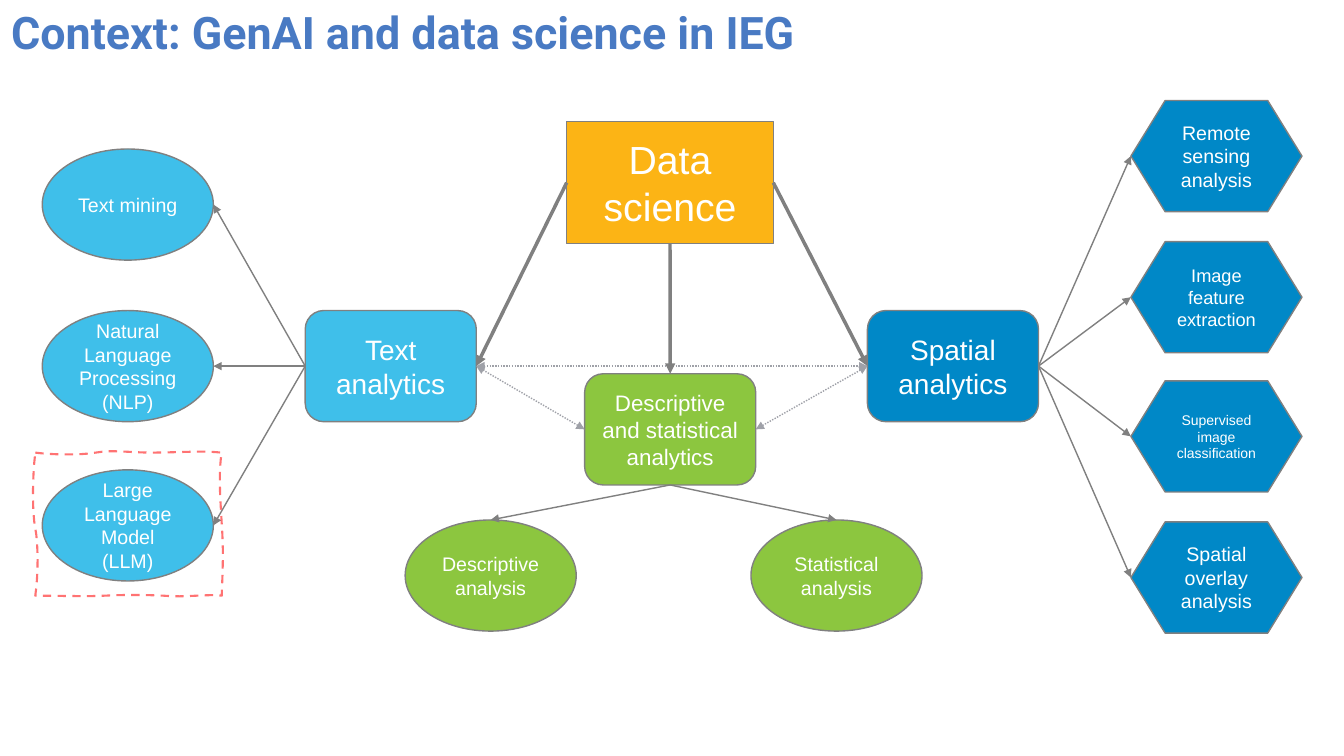
import pptx
import pptx.util
import pptx.dml.color
import pptx.enum.dml
import pptx.enum.shapes
import pptx.enum.text
import pptx.oxml
import pptx.oxml.ns
import lxml.etree

Pt = pptx.util.Pt
MSO_SHAPE = pptx.enum.shapes.MSO_SHAPE
MSO_LINE = pptx.enum.dml.MSO_LINE
MSO_ANCHOR = pptx.enum.text.MSO_ANCHOR
PP_ALIGN = pptx.enum.text.PP_ALIGN
TOP, LEFT, BOTTOM, RIGHT = range(4)

COLORS = {
    "title": "497AC3",
    "white": "FFFFFF",
    "amber": "FCB415",
    "sky": "3FBFEA",
    "blue": "0088C7",
    "green": "8CC63F",
    "gray": "808080",
    "silver": "9FA1A8",
    "red": "FF0000",
}
NODE_W, NODE_H = 122.2, 79.4
TEXT_X, SPATIAL_X = 30.2, 807.8
TEXT_TOPICS = [
    ("Text mining", 106.4),
    ("Natural Language Processing (NLP)", 221.8),
    ("Large Language Model (LLM)", 335.6),
]
SPATIAL_TOPICS = [
    ("Remote sensing analysis", 71.8, 14),
    ("Image feature extraction", 172.6, 13),
    ("Supervised image classification", 272, 10),
    ("Spatial overlay analysis", 372.8, 14),
]
SUMMARY_TOPICS = [("Descriptive analysis", 289.4), ("Statistical analysis", 536.4)]
HIGHLIGHT_START = (25.2, 323.3)
HIGHLIGHT_CURVES = [
    ((35.3, 324.7), (56.2, 325.4), (68.4, 323.3)),
    ((81.4, 321.1), (90.7, 323.3), (108.7, 323.3)),
    ((126.7, 323.3), (143.3, 321.8), (158.4, 323.3)),
    ((156.2, 335.5), (157, 352.1), (158.4, 373.7)),
    ((159.8, 394.6), (159.1, 405.4), (158.4, 425.5)),
    ((149.8, 424.1), (131.8, 427), (116.6, 425.5)),
    ((102.2, 424.8), (87.8, 424.8), (74.9, 425.5)),
    ((62.6, 426.2), (42.5, 425.5), (25.2, 425.5)),
    ((27.4, 411.1), (27.4, 388.1), (25.2, 377.3)),
    ((23, 366.5), (23, 342), (25.2, 323.3)),
]


def rgb(name):
    return pptx.dml.color.RGBColor.from_string(COLORS[name])


def apply(obj, values):
    for name, value in values.items():
        setattr(obj, name, value)


def add_text(tf, text, color, align, font):
    p = tf.paragraphs[0]
    p.alignment = align
    r = p.add_run()
    r.text = text
    apply(r.font, font)
    r.font.color.rgb = rgb(color)


def add_title(s, text):
    sp = s.shapes.title
    apply(sp, {"left": Pt(0.7), "top": Pt(0), "width": Pt(579.6), "height": Pt(46)})
    tf = sp.text_frame
    apply(tf, {
        "word_wrap": False,
        "vertical_anchor": MSO_ANCHOR.TOP,
        "auto_size": pptx.enum.text.MSO_AUTO_SIZE.SHAPE_TO_FIT_TEXT,
    })
    add_text(tf, text, "title", PP_ALIGN.LEFT,
             {"name": "Roboto", "size": Pt(32), "bold": True})


def add_node(s, kind, text, x, y, fill, size=14, w=NODE_W, h=NODE_H):
    sp = s.shapes.add_shape(kind, Pt(x), Pt(y), Pt(w), Pt(h))
    sp.shadow.inherit = False
    sp.fill.solid()
    sp.fill.fore_color.rgb = rgb(fill)
    sp.line.color.rgb = rgb("gray")
    sp.line.width = Pt(1)
    apply(sp.text_frame, {"word_wrap": True, "vertical_anchor": MSO_ANCHOR.MIDDLE})
    add_text(sp.text_frame, text, "white", PP_ALIGN.CENTER,
             {"name": "Arial", "size": Pt(size)})
    return sp


def side(sp, site):
    mid_x, mid_y = sp.left + sp.width // 2, sp.top + sp.height // 2
    return {
        TOP: (mid_x, sp.top),
        LEFT: (sp.left, mid_y),
        BOTTOM: (mid_x, sp.top + sp.height),
        RIGHT: (sp.left + sp.width, mid_y),
    }[site]


def add_arrow(s, begin, end, width=1, color="gray", dotted=False, join_end=True):
    straight = pptx.enum.shapes.MSO_CONNECTOR.STRAIGHT
    cxn = s.shapes.add_connector(straight, *side(*begin), *side(*end))
    cxn.begin_connect(*begin)
    if join_end:
        cxn.end_connect(*end)
    cxn.line.color.rgb = rgb(color)
    cxn.line.width = Pt(width)
    if dotted:
        cxn.line.dash_style = MSO_LINE.ROUND_DOT
    ln = cxn.line._get_or_add_ln()
    for tag in ("a:headEnd", "a:tailEnd") if dotted else ("a:tailEnd",):
        lxml.etree.SubElement(ln, pptx.oxml.ns.qn(tag), type="triangle")
    lxml.etree.SubElement(cxn._element.spPr, pptx.oxml.ns.qn("a:effectLst"))


def curve_points(p0, p1, p2, p3, steps=8):
    for i in range(1, steps + 1):
        t = i / steps
        u = 1 - t
        yield tuple(
            Pt(u ** 3 * a + 3 * u * u * t * b + 3 * u * t * t * c + t ** 3 * d)
            for a, b, c, d in zip(p0, p1, p2, p3)
        )


def add_highlight(s):
    start = HIGHLIGHT_START
    builder = s.shapes.build_freeform(Pt(start[0]), Pt(start[1]))
    for curve in HIGHLIGHT_CURVES:
        builder.add_line_segments(list(curve_points(start, *curve)), close=False)
        start = curve[-1]
    builder.add_line_segments([], close=True)
    sp = builder.convert_to_shape()
    sp.shadow.inherit = False
    sp.fill.background()
    sp.line.color.rgb = rgb("red")
    apply(sp.line, {"width": Pt(1.5), "dash_style": MSO_LINE.DASH})
    clr = sp.line._get_or_add_ln().find(".//" + pptx.oxml.ns.qn("a:srgbClr"))
    lxml.etree.SubElement(clr, pptx.oxml.ns.qn("a:alpha"), val="55000")


def main():
    prs = pptx.Presentation()
    apply(prs, {"slide_width": Pt(960), "slide_height": Pt(540)})
    s = prs.slides.add_slide(prs.slide_layouts[5])
    add_title(s, "Context: GenAI and data science in IEG")

    rounded = MSO_SHAPE.ROUNDED_RECTANGLE
    science = add_node(s, MSO_SHAPE.RECTANGLE, "Data science", 404.8, 87, "amber", 28, 147.6, 87)
    text = add_node(s, rounded, "Text analytics", 218, 221.8, "sky", 20)
    spatial = add_node(s, rounded, "Spatial analytics", 619.6, 221.8, "blue", 20)
    summary = add_node(s, rounded, "Descriptive and statistical analytics", 417.6, 267, "green", 16)

    dotted = {"color": "silver", "dotted": True}
    add_arrow(s, (text, RIGHT), (spatial, LEFT), **dotted)
    add_arrow(s, (text, RIGHT), (summary, LEFT), **dotted)
    add_arrow(s, (summary, RIGHT), (spatial, LEFT), **dotted)
    add_arrow(s, (science, LEFT), (text, RIGHT), 2.5)
    add_arrow(s, (science, RIGHT), (spatial, LEFT), 2.5)
    add_arrow(s, (science, BOTTOM), (summary, TOP), 2.5)

    for label, y in TEXT_TOPICS:
        topic = add_node(s, MSO_SHAPE.OVAL, label, TEXT_X, y, "sky")
        add_arrow(s, (text, LEFT), (topic, RIGHT), join_end=False)
    for label, y, size in SPATIAL_TOPICS:
        topic = add_node(s, MSO_SHAPE.FLOWCHART_PREPARATION, label, SPATIAL_X, y, "blue", size)
        add_arrow(s, (spatial, RIGHT), (topic, LEFT))
    for label, x in SUMMARY_TOPICS:
        topic = add_node(s, MSO_SHAPE.OVAL, label, x, 371.4, "green")
        add_arrow(s, (summary, BOTTOM), (topic, TOP))

    add_highlight(s)
    prs.save("out.pptx")


if __name__ == "__main__":
    main()
